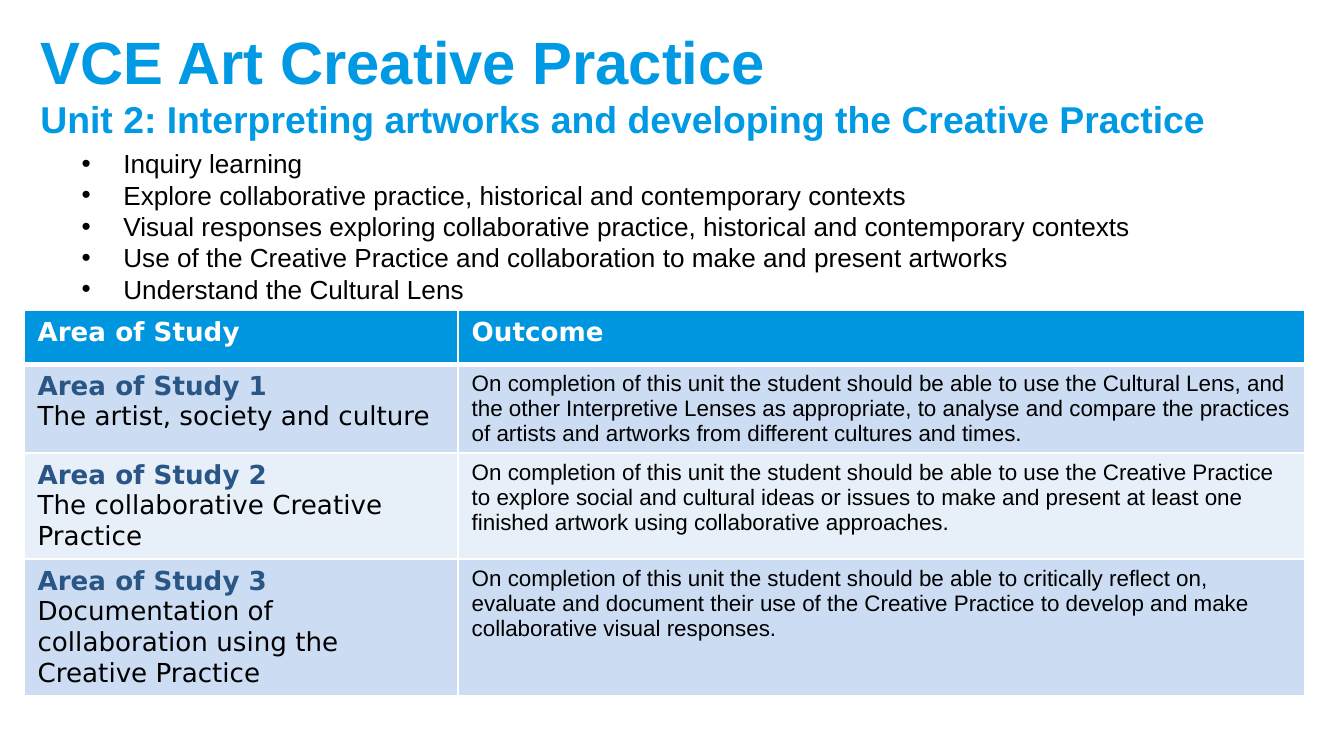
from lxml.etree import SubElement
from pptx import Presentation
from pptx.dml.color import RGBColor
from pptx.enum.text import MSO_ANCHOR, MSO_AUTO_SIZE, PP_ALIGN
from pptx.oxml.ns import qn
from pptx.util import Pt

TITLE = [
    ("VCE Art Creative Practice ", 32),
    ("Unit 2: Interpreting artworks and developing the Creative Practice", 20),
]
POINTS = [
    "Inquiry learning",
    "Explore collaborative practice, historical and contemporary contexts",
    "Visual responses exploring collaborative practice, historical and contemporary contexts",
    "Use of the Creative Practice and collaboration to make and present artworks",
    "Understand the Cultural Lens",
]
HEADS = ["Area of Study", "Outcome"]
AREAS = [
    ("Area of Study 1", "The artist, society and culture",
     "On completion of this unit the student should be able to use the Cultural Lens, and the other "
     "Interpretive Lenses as appropriate, to analyse and compare the practices of artists and artworks "
     "from different cultures and times."),
    ("Area of Study 2", "The collaborative Creative Practice",
     "On completion of this unit the student should be able to use the Creative Practice to explore "
     "social and cultural ideas or issues to make and present at least one finished artwork using "
     "collaborative approaches."),
    ("Area of Study 3", "Documentation of collaboration using the Creative Practice",
     "On completion of this unit the student should be able to critically reflect on, evaluate and "
     "document their use of the Creative Practice to develop and make collaborative visual responses."),
]

SKY = RGBColor(0x00, 0x99, 0xE3)
HEAD = RGBColor(0x00, 0x96, 0xDF)
NAVY = RGBColor(0x2A, 0x56, 0x86)
BLACK = RGBColor(0x00, 0x00, 0x00)
WHITE = RGBColor(0xFF, 0xFF, 0xFF)
BANDS = [RGBColor(0xCC, 0xDD, 0xF3), RGBColor(0xE7, 0xEF, 0xF9)]

COLS = [323, 630]
ROWS = [40, 66, 79, 100]
INDENT = 31


def px(n):
    return n * 9144


def write(para, text, size=14, face="Arial", color=BLACK, bold=False):
    run = para.add_run()
    run.text = text
    font = run.font
    font.size, font.name, font.bold = Pt(size), face, bold
    font.color.rgb = color


def place(shape, left, top, width, height):
    shape.left, shape.top = px(left), px(top)
    shape.width, shape.height = px(width), px(height)


def bullet(para):
    props = para._p.get_or_add_pPr()
    props.set("marL", str(px(INDENT)))
    props.set("indent", str(-px(INDENT)))
    SubElement(props, qn("a:buFont"), typeface="Arial")
    SubElement(props, qn("a:buChar"), char="•")


def paint(cell, color, top=1, base=1):
    props = cell._tc.get_or_add_tcPr()
    for side, width in (("L", 1), ("R", 1), ("T", top), ("B", base)):
        line = SubElement(props, qn(f"a:ln{side}"), w=str(Pt(width)))
        solid = SubElement(line, qn("a:solidFill"))
        SubElement(solid, qn("a:srgbClr"), val=str(WHITE))
    cell.fill.solid()
    cell.fill.fore_color.rgb = color


deck = Presentation()
deck.slide_width = px(1000)
deck.slide_height = deck.slide_width * 9 // 16
slide = deck.slides.add_slide(deck.slide_layouts[5])

title = slide.shapes.title
place(title, 20, 18, 953, 87)
frame = title.text_frame
frame.auto_size = MSO_AUTO_SIZE.NONE
frame.vertical_anchor = MSO_ANCHOR.MIDDLE
para = frame.paragraphs[0]
para.alignment = PP_ALIGN.LEFT
for i, (text, size) in enumerate(TITLE):
    if i:
        para.add_line_break()
    write(para, text, size=size, color=SKY, bold=True)

grid = slide.shapes.add_table(
    len(ROWS), len(COLS), px(18), px(231), px(sum(COLS)), px(sum(ROWS))).table
for col, width in zip(grid.columns, COLS):
    col.width = px(width)
for row, height in zip(grid.rows, ROWS):
    row.height = px(height)
for c, text in enumerate(HEADS):
    cell = grid.cell(0, c)
    paint(cell, HEAD, base=3)
    write(cell.text_frame.paragraphs[0], text, face="DejaVu Sans", color=WHITE, bold=True)
for r, (area, topic, goal) in enumerate(AREAS):
    left, right = grid.cell(r + 1, 0), grid.cell(r + 1, 1)
    for cell in (left, right):
        paint(cell, BANDS[r % 2], top=1 if r else 3)
    write(left.text_frame.paragraphs[0], area, face="DejaVu Sans", color=NAVY, bold=True)
    write(left.text_frame.add_paragraph(), topic, face="DejaVu Sans")
    write(right.text_frame.paragraphs[0], goal, size=12)

box = slide.shapes.add_textbox(px(51), px(105), px(866), px(128))
frame = box.text_frame
frame.word_wrap = True
for i, text in enumerate(POINTS):
    para = frame.add_paragraph() if i else frame.paragraphs[0]
    bullet(para)
    write(para, text)

deck.save("out.pptx")
